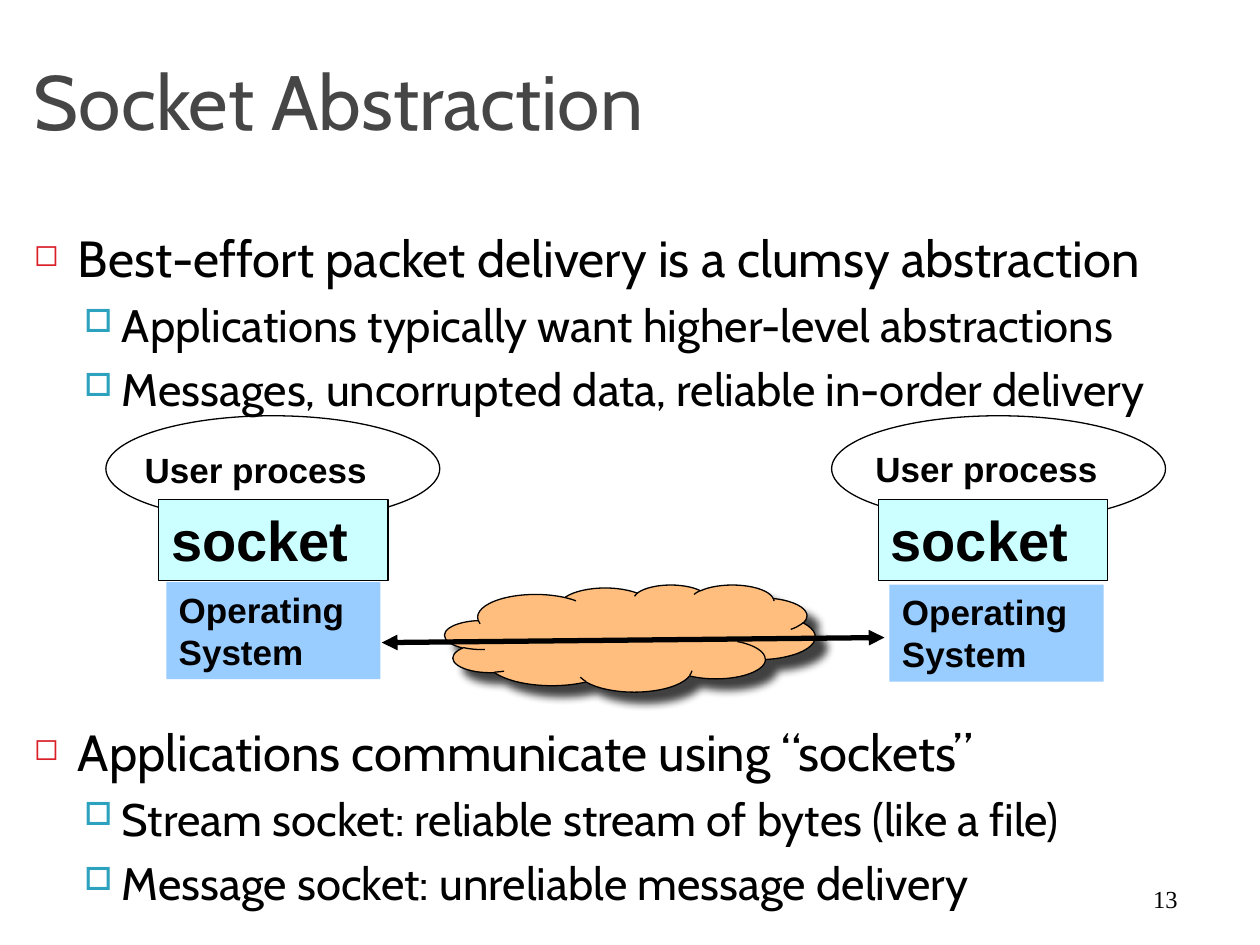
from lxml.etree import SubElement
from pptx import Presentation
from pptx.dml.color import RGBColor
from pptx.enum.shapes import MSO_CONNECTOR, MSO_SHAPE
from pptx.enum.text import MSO_ANCHOR, PP_ALIGN
from pptx.oxml.ns import qn
from pptx.util import Pt

BLACK = RGBColor(0x00, 0x00, 0x00)
TITLE_GREY = RGBColor(0x46, 0x46, 0x46)
BULLET_RED = RGBColor(0xDA, 0x1F, 0x28)
BULLET_TEAL = RGBColor(0x2D, 0xA2, 0xBF)
SOCKET_FILL = RGBColor(0xCC, 0xFF, 0xFF)
SYSTEM_FILL = RGBColor(0x99, 0xCC, 0xFF)
CLOUD_FILL = RGBColor(0xFF, 0xBE, 0x7D)

LEVELS = (
    dict(size=29, margin=25.2, indent=-25.2, before=7, mark="◻", color=BULLET_RED, percent=60),
    dict(size=26, margin=50.4, indent=-21.6, before=5.5, mark="□", color=BULLET_TEAL, percent=70),
)
DIAGRAM_GAP = 174
BULLETS = (
    (0, "Best-effort packet delivery is a clumsy abstraction", None),
    (1, "Applications typically want higher-level abstractions", None),
    (1, "Messages, uncorrupted data, reliable in-order delivery", None),
    (0, "Applications communicate using “sockets”", DIAGRAM_GAP),
    (1, "Stream socket: reliable stream of bytes (like a file)", None),
    (1, "Message socket: unreliable message delivery", None),
)


def add_span(para, text, size, font, color=BLACK, bold=False):
    """Add one formatted run to a paragraph."""
    span = para.add_run()
    span.text = text
    span.font.size = Pt(size)
    span.font.name = font
    span.font.color.rgb = color
    span.font.bold = bold


def write_lines(box, lines, size, font, color=BLACK, bold=False,
                anchor=MSO_ANCHOR.TOP, align=PP_ALIGN.LEFT):
    """Write each line as a paragraph of a shape."""
    frame = box.text_frame
    frame.word_wrap = True
    frame.vertical_anchor = anchor
    for index, line in enumerate(lines):
        para = frame.add_paragraph() if index else frame.paragraphs[0]
        para.alignment = align
        add_span(para, line, size, font, color, bold)


def add_box(page, left, top, width, height):
    """Add an empty text box."""
    return page.shapes.add_textbox(Pt(left), Pt(top), Pt(width), Pt(height))


def add_figure(page, preset, left, top, width, height, fill=None, outlined=True):
    """Add a preset shape with an optional fill and thin outline."""
    figure = page.shapes.add_shape(preset, Pt(left), Pt(top), Pt(width), Pt(height))
    figure.shadow.inherit = False
    if fill is None:
        figure.fill.background()
    else:
        figure.fill.solid()
        figure.fill.fore_color.rgb = fill
    if outlined:
        figure.line.color.rgb = BLACK
        figure.line.width = Pt(0.75)
    else:
        figure.line.fill.background()
    return figure


def add_bullets(page):
    """Add the two-level list, leaving room for the diagram."""
    frame = add_box(page, 12.24, 126, 696.24, 401.76).text_frame
    frame.word_wrap = True
    for index, (level, text, gap) in enumerate(BULLETS):
        style = LEVELS[level]
        para = frame.add_paragraph() if index else frame.paragraphs[0]
        para.level = level
        para.space_before = Pt(gap or style["before"])
        properties = para._p.get_or_add_pPr()
        properties.set("marL", str(Pt(style["margin"])))
        properties.set("indent", str(Pt(style["indent"])))
        color = SubElement(properties, qn("a:buClr"))
        SubElement(color, qn("a:srgbClr"), val=str(style["color"]))
        SubElement(properties, qn("a:buSzPct"), val=str(style["percent"] * 1000))
        SubElement(properties, qn("a:buChar"), char=style["mark"])
        add_span(para, text, style["size"], "Cabin")


def add_host(page, ellipse_left, socket_left, label, system):
    """Add one host: user process, socket and operating system."""
    add_figure(page, MSO_SHAPE.OVAL, ellipse_left, 237.6, 190.8, 60.48)
    socket = add_figure(page, MSO_SHAPE.RECTANGLE, socket_left, 285.6, 131.04, 46.08, SOCKET_FILL)
    write_lines(socket, ["socket"], 32, "Arial", bold=True)
    process = add_box(page, *label, 158.4, 30.96)
    write_lines(process, ["User process"], 20, "Arial", bold=True)
    kernel = add_figure(page, MSO_SHAPE.RECTANGLE, *system, 122.4, 55.44, SYSTEM_FILL, False)
    write_lines(kernel, ["Operating", "System"], 20, "Arial", bold=True)


def add_cloud(page):
    """Add the network cloud with its soft shadow."""
    cloud = add_figure(page, MSO_SHAPE.CLOUD, 254.16, 334.08, 211.68, 61.2, CLOUD_FILL)
    effects = cloud._element.spPr.find(qn("a:effectLst"))
    shadow = SubElement(effects, qn("a:outerShdw"), blurRad=str(Pt(5)), dist=str(Pt(8.5)),
                        dir="2700000", algn="ctr", rotWithShape="0")
    color = SubElement(shadow, qn("a:srgbClr"), val=str(BLACK))
    SubElement(color, qn("a:alpha"), val="75000")


def add_double_arrow(page, start, end):
    """Add a thick line with arrowheads at both ends."""
    arrow = page.shapes.add_connector(MSO_CONNECTOR.STRAIGHT, *map(Pt, start + end))
    arrow.line.color.rgb = BLACK
    arrow.line.width = Pt(3)
    outline = arrow.line._get_or_add_ln()
    for tag in ("a:headEnd", "a:tailEnd"):
        SubElement(outline, qn(tag), type="triangle")
    SubElement(arrow._element.spPr, qn("a:effectLst"))


def main():
    """Build and save the slide."""
    deck = Presentation()
    deck.slide_width, deck.slide_height = Pt(720), Pt(540)
    page = deck.slides.add_slide(deck.slide_layouts[6])
    title = add_box(page, 12.24, 18, 696.24, 77.76)
    write_lines(title, ["Socket Abstraction"], 44, "Cabin", TITLE_GREY, anchor=MSO_ANCHOR.MIDDLE)
    add_bullets(page)
    number = add_box(page, 630, 498.24, 72, 30.24)
    write_lines(number, ["13"], 14, "Times New Roman",
                anchor=MSO_ANCHOR.MIDDLE, align=PP_ALIGN.CENTER)
    add_host(page, 60.48, 90.72, (75.6, 252.72), (95.04, 332.64))
    add_host(page, 475.2, 501.84, (493.2, 252), (508.32, 334.08))
    add_cloud(page)
    add_double_arrow(page, (218.16, 367.2), (505.44, 364.32))
    deck.save("out.pptx")


if __name__ == "__main__":
    main()
